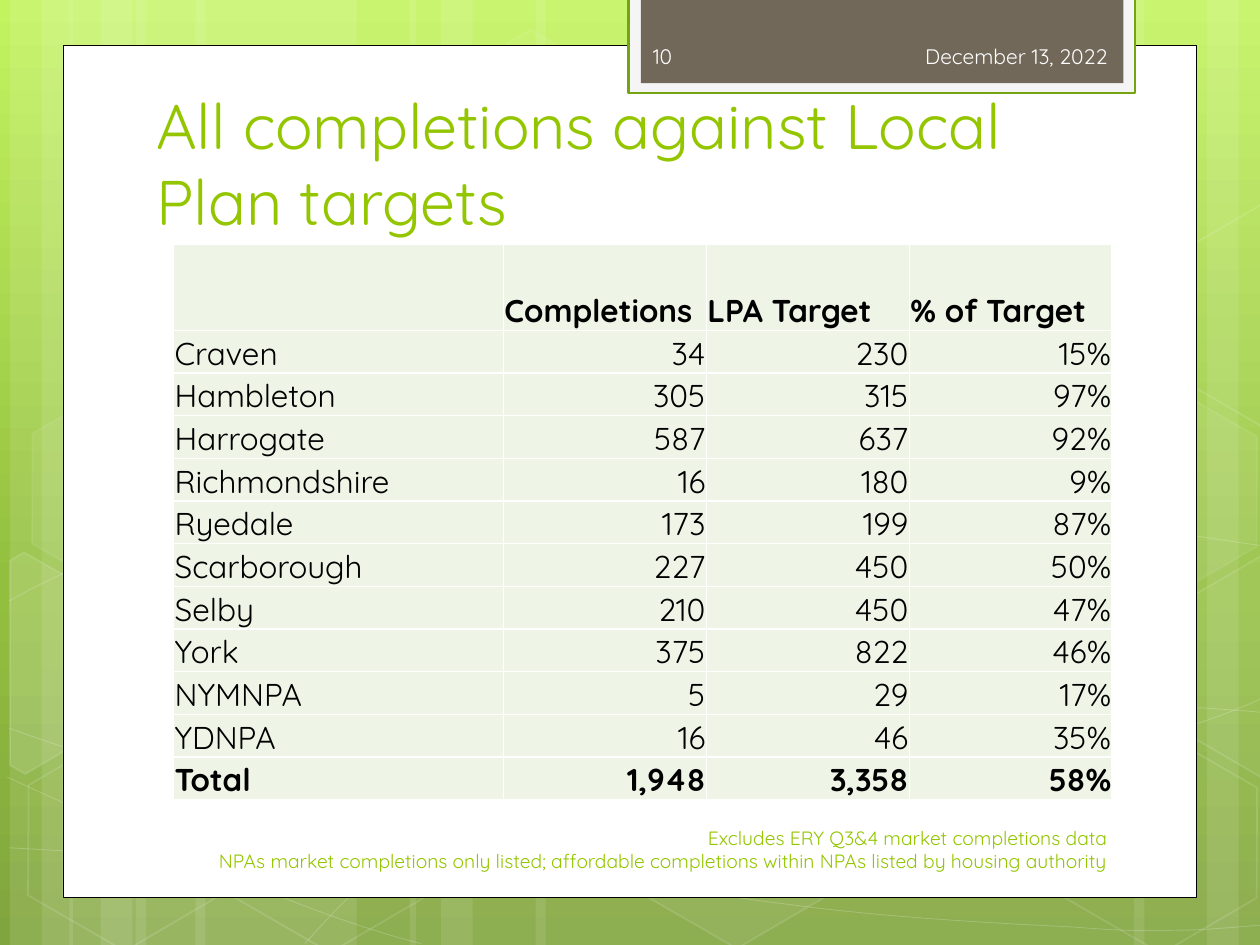
from copy import deepcopy
from math import cos, radians, sin
from lxml import etree
from pptx import Presentation
from pptx.dml.color import RGBColor
from pptx.enum.shapes import MSO_SHAPE
from pptx.enum.text import MSO_ANCHOR, PP_ALIGN
from pptx.oxml.ns import qn
from pptx.util import Cm, Pt

RECT, HEXAGON = MSO_SHAPE.RECTANGLE, MSO_SHAPE.HEXAGON
LEFT, RIGHT = PP_ALIGN.LEFT, PP_ALIGN.RIGHT
MIDDLE, BOTTOM = MSO_ANCHOR.MIDDLE, MSO_ANCHOR.BOTTOM
FONT, GREEN, WHITE, PALE = "Quicksand", "94C600", "FFFFFF", "FEFEFE"
W, H, TILT = 25.4, 19.05, 30

# Content: text, box (left, top, width, height), size, colour, alignment, anchor
TEXTS = [
    (["All completions against Local Plan targets"], (2.9, 1.92, 19.51, 3), 36, GREEN, LEFT, BOTTOM),
    (["December 13, 2022"], (16.66, 0.63, 5.92, 1.02), 12, PALE, RIGHT, MIDDLE),
    (["Excludes ERY Q3&4 market completions data",
      "NPAs market completions only listed; affordable completions within NPAs listed by housing authority"],
     (3.07, 16.61, 19.51, 1.02), 11, GREEN, RIGHT, MIDDLE),
    (["10"], (12.91, 0.63, 3.71, 1.02), 12, PALE, LEFT, MIDDLE),
]
ROWS = [
    ("", "Completions", "LPA Target", "% of Target"),
    ("Craven", "34", "230", "15%"),
    ("Hambleton", "305", "315", "97%"),
    ("Harrogate", "587", "637", "92%"),
    ("Richmondshire", "16", "180", "9%"),
    ("Ryedale", "173", "199", "87%"),
    ("Scarborough", "227", "450", "50%"),
    ("Selby", "210", "450", "47%"),
    ("York", "375", "822", "46%"),
    ("NYMNPA", "5", "29", "17%"),
    ("YDNPA", "16", "46", "35%"),
    ("Total", "1,948", "3,358", "58%"),
]
COL_WIDTHS = [6.65, 4.09, 4.09, 4.09]
HEADER_H, ROW_H = 1.73, 0.86

# Backdrop: gradient stops, stripes (left, width), hexagons (left, top, fill %, line %)
GRADIENT = [(0, "C3F35F"), (0.62, "93BF3F"), (1, "81A53E")]
STRIPES = [(2.74, 4.45, 0), (0.2, 1.27, 0), (0.84, 2.11, 0), (3.94, 4.45, 0), (1.4, 1.27, 0), (2.03, 2.11, 0),
           (18.62, 4.45, 180), (24.33, 1.27, 180), (22.86, 2.11, 180),
           (10.8, 7.82, 0), (8.26, 1.27, 0), (8.89, 2.11, 0)]
HEXAGONS = [(8.48, 0.91, 4, 8), (12.62, 14.96, 6, 12), (0.28, 15.01, 0, 12), (0.36, 7.92, 7, 8),
            (4.42, 15.04, 0, 12), (19.13, 11.51, 10, 12), (21.18, 15.06, 0, 12), (21.18, 7.98, 7, 8)]
# Hexagons cut by the slide edge: corners as seen, centre, fill %
LEFT_CUT = [(0.2, 11.3), (0.48, 11.13), (2.44, 12.24), (2.41, 14.48), (0.51, 15.6), (0.2, 15.42)]
RIGHT_CUT = [(23.52, 12.32), (25.43, 11.2), (25.63, 11.33), (25.63, 15.57), (25.45, 15.67), (23.52, 14.55)]
UPPER_CUT = [(x, y - 7.08) for x, y in RIGHT_CUT]
CUT_HEXAGONS = [(LEFT_CUT, (0.91, 13.59), 10), (RIGHT_CUT, (25.02, 13.21), 4), (UPPER_CUT, (25.02, 6.13), 0)]
# Bezier chains: a start point, then two control points and an end point per segment
CURVES = [
    [(0.18, 17.09), (1.55, 17.17), (2.92, 17.25), (4.83, 17.22), (6.73, 17.2), (9.09, 17.15), (11.63, 16.89),
     (14.17, 16.64), (17.78, 16.15), (20.12, 15.67), (22.43, 15.19), (24.82, 14.43), (25.58, 14)],
    [(0.18, 12.12), (0.91, 11.71), (1.65, 11.33), (3.07, 10.95), (4.52, 10.57), (6.58, 10.01), (8.81, 9.83),
     (11.07, 9.65), (13.82, 9.63), (16.61, 9.83), (19.41, 10.03), (24.05, 10.82), (25.58, 11.02)],
    [(0.15, 15.67), (3.23, 17.07), (6.27, 18.47), (8.48, 19.02)],
    [(0.18, 14.68), (0.97, 14.96), (1.78, 15.24), (3.25, 15.65), (4.72, 16.03), (6.93, 16.66), (9.07, 17.09),
     (11.18, 17.53), (13.84, 17.98), (15.95, 18.24), (18.06, 18.52), (20.32, 18.62), (21.67, 18.69),
     (22.99, 18.8), (23.34, 18.75), (24, 18.75), (24.66, 18.72), (25.12, 18.67), (25.58, 18.64)],
    [(6.15, 19.02), (6.6, 18.52), (7.06, 18.01), (7.67, 17.55), (8.28, 17.09), (9.14, 16.59), (9.86, 16.23),
     (10.57, 15.88), (11, 15.72), (11.94, 15.47), (12.85, 15.21), (14.55, 14.86), (15.44, 14.68),
     (16.36, 14.5), (16.48, 14.5), (17.27, 14.45), (18.06, 14.38), (19.3, 14.3), (20.17, 14.27),
     (21.06, 14.25), (22.5, 14.27), (22.5, 14.27), (23.07, 14.27), (23.64, 14.27), (24.21, 14.27),
     (24.66, 14.3), (25.1, 14.33), (25.32, 14.35), (25.55, 14.38), (25.48, 14.35), (25.55, 14.38)],
]
# Panels: box, fill, line colour, line width
PANELS = [
    ((1.27, 0.92, 22.86, 17.18), WHITE, "000000", 0.5),
    ((12.67, -0.05, 10.21, 1.93), "F5F5F5", "74A510", 1.25),
    ((12.92, -0.05, 9.73, 1.73), "71685A", None, 0),
]


def rgb(value):
    return RGBColor.from_string(value)


def paint(fill, color, alpha):
    """Solid fill with an opacity in percent; none at 0."""
    if not alpha:
        fill.background()
        return
    fill.solid()
    fill.fore_color.rgb = rgb(color)
    if alpha < 100:
        clr = fill._xPr.find(".//" + qn("a:srgbClr"))
        etree.SubElement(clr, qn("a:alpha"), val=str(alpha * 1000))


def style(sp, fill=WHITE, fill_alpha=100, line=WHITE, line_alpha=100, width=1):
    sp.shadow.inherit = False
    paint(sp.fill, fill, fill_alpha)
    paint(sp.line.fill, line, line_alpha)
    if line_alpha:
        sp.line.width = Pt(width)


def add_shape(kind, box):
    return s.shapes.add_shape(kind, *map(Cm, box))


def outline(points, close):
    pts = [(Cm(x), Cm(y)) for x, y in points]
    fb = s.shapes.build_freeform(*pts[0])
    fb.add_line_segments(pts[1:], close=close)
    return fb.convert_to_shape()


def curve(chain):
    """Open outline whose points are joined in threes as cubic segments."""
    sp = outline(chain, False)
    lines = list(sp._element.iter(qn("a:lnTo")))
    for i in range(0, len(lines), 3):
        segment = etree.Element(qn("a:cubicBezTo"))
        lines[i].addprevious(segment)
        for line in lines[i:i + 3]:
            segment.append(line[0])
            line.getparent().remove(line)
    return sp


def turn_back(point, centre):
    """Where a corner lies before the shape is tilted about its centre."""
    dx, dy = point[0] - centre[0], point[1] - centre[1]
    c, n = cos(radians(TILT)), sin(radians(TILT))
    return centre[0] + dx * c + dy * n, centre[1] - dx * n + dy * c


def write(p, text, align, size, color, bold=False):
    p.alignment = align
    r = p.add_run()
    r.text = text
    for name, value in {"name": FONT, "size": Pt(size), "bold": bold}.items():
        setattr(r.font, name, value)
    r.font.color.rgb = rgb(color)


def add_borders(cell):
    tcPr = cell._tc.get_or_add_tcPr()
    for i, side in enumerate("LRTB"):
        ln = etree.Element(qn("a:ln" + side), w=str(Pt(1)))
        etree.SubElement(etree.SubElement(ln, qn("a:solidFill")), qn("a:srgbClr"), val=WHITE)
        tcPr.insert(i, ln)


prs = Presentation()
prs.slide_width, prs.slide_height = Cm(W), Cm(H)
s = prs.slides.add_slide(prs.slide_layouts[6])

# Background gradient
bg = s.background.fill
bg.gradient()
bg.gradient_angle = 270
stops = s._element.find(".//" + qn("a:gsLst"))
stops.insert(1, deepcopy(stops[0]))
for stop, (position, color) in zip(bg.gradient_stops, GRADIENT):
    stop.position = position
    stop.color.rgb = rgb(color)

# Stripes, curves and hexagons
for left, width, rotation in STRIPES:
    sp = add_shape(RECT, (left, 0, width, H))
    sp.rotation = rotation
    style(sp, fill_alpha=10, line_alpha=0)
for chain in CURVES:
    style(curve(chain), fill_alpha=0, line_alpha=20, width=0.5)
for left, top, fill_alpha, line_alpha in HEXAGONS:
    sp = add_shape(HEXAGON, (left, top, 4.45, 3.86))
    sp.adjustments[0] = 0.285
    sp.rotation = TILT
    style(sp, fill_alpha=fill_alpha, line_alpha=line_alpha)
for corners, centre, fill_alpha in CUT_HEXAGONS:
    sp = outline([turn_back(corner, centre) for corner in corners], True)
    sp.rotation = TILT
    style(sp, fill_alpha=fill_alpha, line_alpha=12)

# White page and header tab
for box, fill, line, width in PANELS:
    style(add_shape(RECT, box), fill=fill, line=line, line_alpha=100 if line else 0, width=width)

# Title, date, footnote and slide number
for lines, box, size, color, align, anchor in TEXTS:
    tf = s.shapes.add_textbox(*map(Cm, box)).text_frame
    tf.word_wrap = True
    tf.vertical_anchor = anchor
    for i, line in enumerate(lines):
        write(tf.add_paragraph() if i else tf.paragraphs[0], line, align, size, color)

# Completions table
heights = [HEADER_H] + [ROW_H] * (len(ROWS) - 1)
table = s.shapes.add_table(len(ROWS), len(COL_WIDTHS), Cm(3.5), Cm(4.93),
                           Cm(sum(COL_WIDTHS)), Cm(sum(heights))).table
table.first_row = table.horz_banding = False
for col, width in zip(table.columns, COL_WIDTHS):
    col.width = Cm(width)
CELL = {"vertical_anchor": BOTTOM, "margin_left": Cm(0.02), "margin_right": Cm(0.02),
        "margin_top": Cm(0.02), "margin_bottom": 0}
for i, values in enumerate(ROWS):
    table.rows[i].height = Cm(heights[i])
    for j, value in enumerate(values):
        cell = table.cell(i, j)
        for name, setting in CELL.items():
            setattr(cell, name, setting)
        paint(cell.fill, "EEF5E7", 100)
        add_borders(cell)
        if value:
            write(cell.text_frame.paragraphs[0], value, RIGHT if i and j else LEFT, 18, "000000",
                  bold=i in (0, len(ROWS) - 1))

prs.save("out.pptx")
